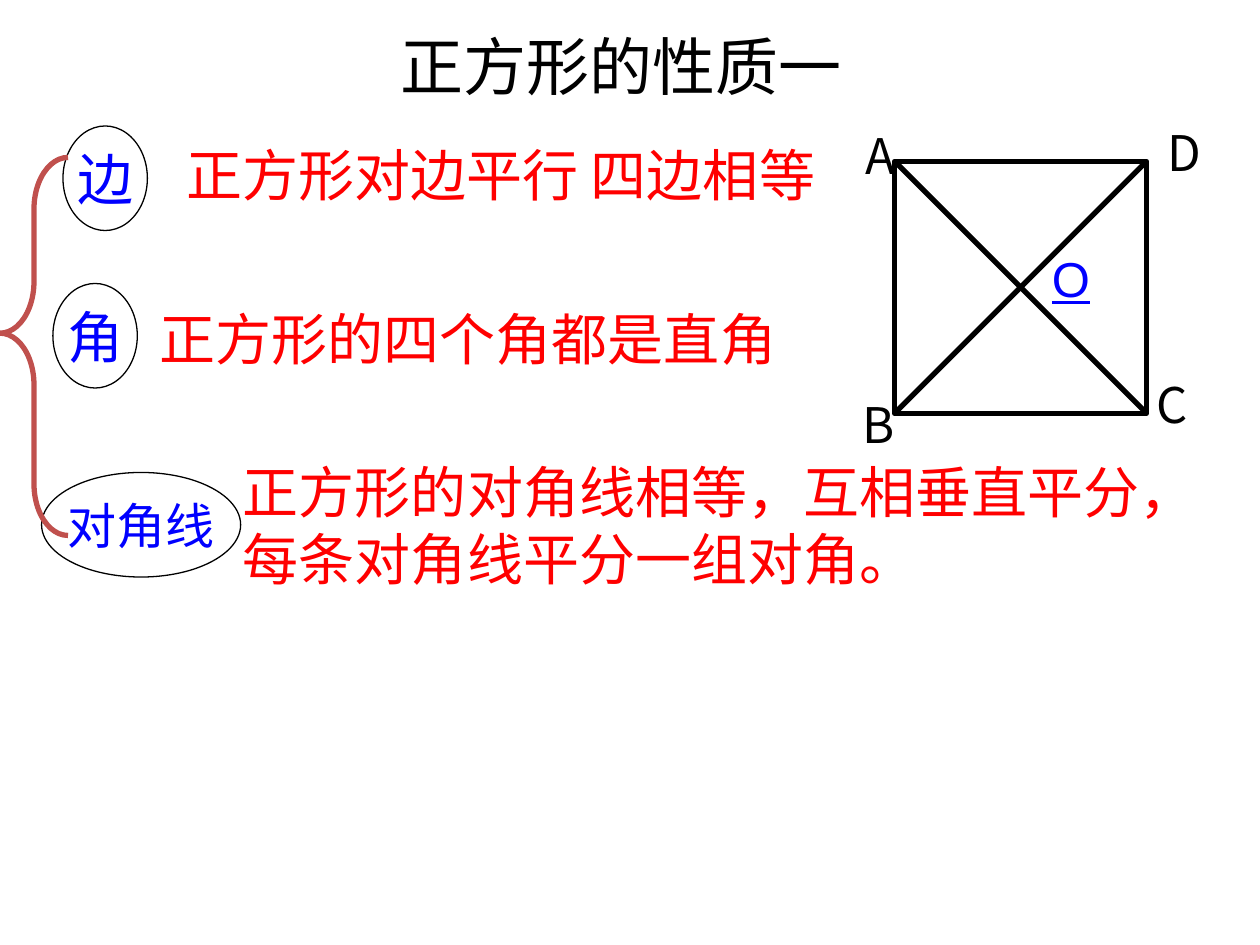
from lxml import etree
from pptx import Presentation
from pptx.dml.color import RGBColor
from pptx.enum import shapes, text
from pptx.oxml import ns
from pptx.util import Inches, Pt

BLACK = RGBColor(0, 0, 0)
WHITE = RGBColor(255, 255, 255)
BLUE = RGBColor(0, 0, 255)
RED = RGBColor(255, 0, 0)
BRICK = RGBColor(0xC0, 0x50, 0x4D)
LATIN, CHINESE = "Arial", "Noto Sans CJK SC"

# Content: places are left, top, width, height in inches
TITLE = ("正方形的性质一", (2.22, 0.17, 5.42, 0.75))
TOPICS = [  # label, size, place
    ("边", 32, (0.5, 1, 0.67, 0.83)),
    ("对角线", 28, (0.33, 3.75, 1.58, 0.83)),
    ("角", 32, (0.42, 2.25, 0.67, 0.83)),
]
PROPERTIES = [
    ("正方形对边平行 四边相等", (1.38, 1.07, 5.62, 0.63)),
    ("正方形的四个角都是直角", (1.17, 2.37, 5.17, 0.63)),
    ("正方形的对角线相等，互相垂直平分，每条对角线平分一组对角。", (1.83, 3.58, 7.88, 1.17)),
]
BRACE = (0, 1.25, 0.54, 3)
SQUARE_LEFT, SQUARE_TOP, SIDE = 7.1, 1.28, 2
POINTS = [  # letter, left, top, width, wraps
    ("A", 6.77, 0.95, 0.51, True),
    ("B", 6.75, 3.08, 0.4, False),
    ("C", 9.08, 2.92, 0.4, False),
    ("D", 9.17, 0.92, 0.4, False),
]
CENTRE = ("O", 8.25, 1.92, 0.4, False)
POINT_HEIGHT = 0.57


def inches(values):
    return [Inches(value) for value in values]


def write(shape, words, size, color, font=LATIN, align=text.PP_ALIGN.LEFT, wrap=True):
    frame = shape.text_frame
    frame.word_wrap = wrap
    para = frame.paragraphs[0]
    para.text = words
    para.alignment = align
    para.font.size = Pt(size)
    para.font.name = font
    para.font.color.rgb = color
    # East Asian typeface follows the Latin one
    defaults = para._p.pPr.find(ns.qn("a:defRPr"))
    etree.SubElement(defaults, ns.qn("a:ea")).set("typeface", CHINESE)
    return para


def add_text(parent, place, *args, grow=True, **kwargs):
    box = parent.add_textbox(*inches(place))
    para = write(box, *args, **kwargs)
    if grow:
        box.text_frame.auto_size = text.MSO_AUTO_SIZE.SHAPE_TO_FIT_TEXT
    return para


def add_outline(parent, kind, place, color, width, fill=None):
    shape = parent.add_shape(kind, *inches(place))
    shape.shadow.inherit = False
    if fill is None:
        shape.fill.background()
    else:
        shape.fill.solid()
        shape.fill.fore_color.rgb = fill
    shape.line.color.rgb = color
    shape.line.width = Pt(width)
    return shape


def add_line(parent, start, end):
    line = parent.add_connector(shapes.MSO_CONNECTOR.STRAIGHT, *inches(start + end))
    line.line.color.rgb = BLACK
    line.line.width = Pt(3)
    etree.SubElement(line._element.spPr, ns.qn("a:effectLst"))


def main():
    deck = Presentation()
    deck.slide_width, deck.slide_height = Inches(10), Inches(7.5)
    page = deck.slides.add_slide(deck.slide_layouts[6])
    parts = page.shapes
    center = text.PP_ALIGN.CENTER

    # Topics, joined by a brace
    for label, size, place in TOPICS:
        oval = add_outline(parts, shapes.MSO_SHAPE.OVAL, place, BLACK, 0.75, WHITE)
        oval.text_frame.vertical_anchor = text.MSO_ANCHOR.MIDDLE
        write(oval, label, size, BLUE, align=center, wrap=False)
    brace = add_outline(parts, shapes.MSO_SHAPE.LEFT_BRACE, BRACE, BRICK, 3)
    brace.adjustments[0], brace.adjustments[1] = 0.757, 0.465

    # Title and properties
    words, place = TITLE
    add_text(parts, place, words, 36, BLACK, align=center, wrap=False, grow=False)
    for words, place in PROPERTIES:
        add_text(parts, place, words, 32, RED)

    # Square with its diagonals
    figure = parts.add_group_shape().shapes
    right, bottom = SQUARE_LEFT + SIDE, SQUARE_TOP + SIDE
    add_outline(figure, shapes.MSO_SHAPE.RECTANGLE,
                (SQUARE_LEFT, SQUARE_TOP, SIDE, SIDE), BLACK, 3)
    add_line(figure, (SQUARE_LEFT, SQUARE_TOP), (right, bottom))
    add_line(figure, (right, SQUARE_TOP), (SQUARE_LEFT, bottom))

    # Point letters
    for letter, left, top, width, wrap in POINTS:
        add_text(figure, (left, top, width, POINT_HEIGHT), letter, 28, BLACK,
                 font=CHINESE, wrap=wrap)
    letter, left, top, width, wrap = CENTRE
    para = add_text(figure, (left, top, width, POINT_HEIGHT), letter, 28, BLUE, wrap=wrap)
    para.font.underline = True

    deck.save("out.pptx")


if __name__ == "__main__":
    main()
